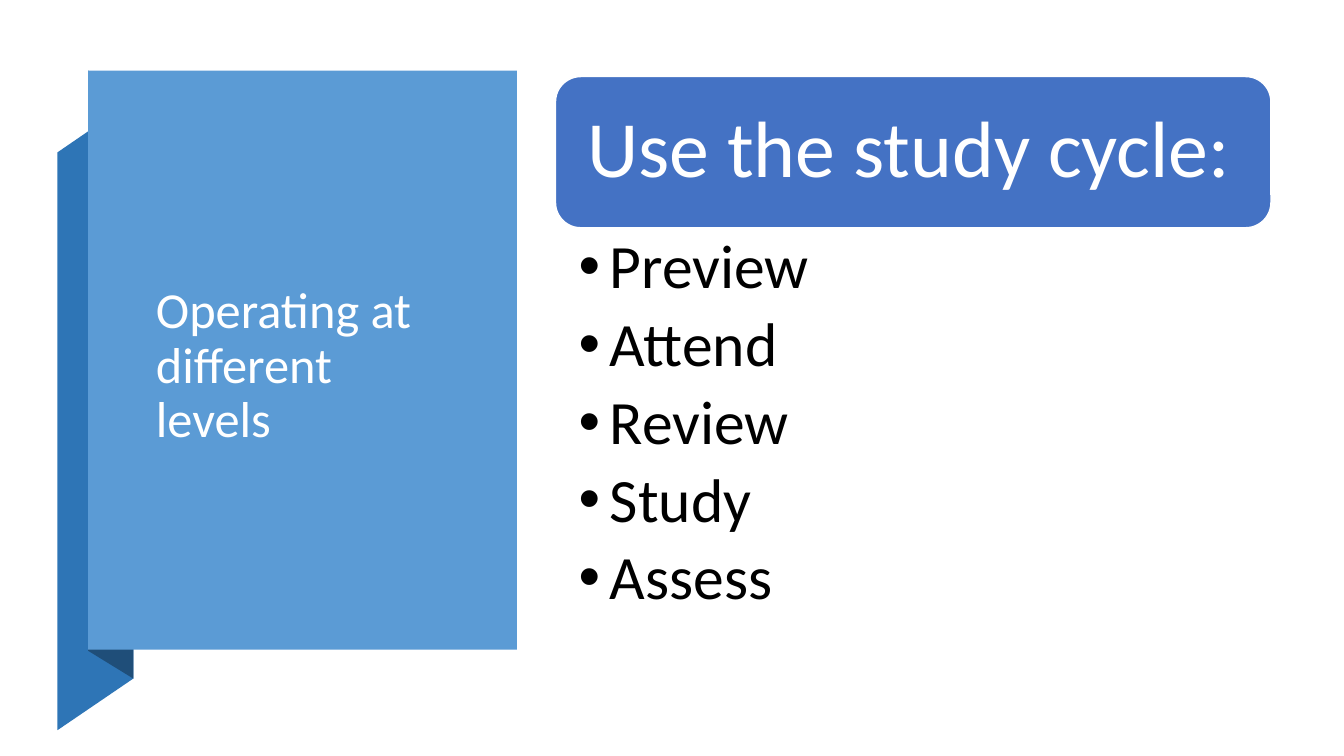
from lxml import etree
from pptx import Presentation
from pptx.dml.color import RGBColor
from pptx.enum.shapes import MSO_SHAPE
from pptx.enum.text import MSO_ANCHOR, MSO_AUTO_SIZE, PP_ALIGN
from pptx.oxml.ns import qn
from pptx.util import Cm, Pt

RECT, ROUND = MSO_SHAPE.RECTANGLE, MSO_SHAPE.ROUNDED_RECTANGLE
TOP, MIDDLE = MSO_ANCHOR.TOP, MSO_ANCHOR.MIDDLE
LEFT, NO_FIT = PP_ALIGN.LEFT, MSO_AUTO_SIZE.NONE


def paint(sp, color):
    sp.shadow.inherit = False
    sp.fill.solid()
    sp.fill.fore_color.rgb = RGBColor.from_string(color)
    sp.line.fill.background()


def style_text(sp, size, color, anchor, insets, after=0):
    tf = sp.text_frame
    tf.word_wrap, tf.auto_size, tf.vertical_anchor = True, NO_FIT, anchor
    tf.margin_left, tf.margin_top, tf.margin_right, tf.margin_bottom = map(Cm, insets)
    for p in tf.paragraphs:
        p.alignment, p.line_spacing = LEFT, 0.9
        p.space_before, p.space_after = Pt(0), Pt(after)
        for r in p.runs:
            r.font.name, r.font.size = "Calibri", Pt(size)
            r.font.color.rgb = RGBColor.from_string(color)


prs = Presentation()
prs.slide_width, prs.slide_height = Cm(33.87), Cm(19.05)
s = prs.slides.add_slide(prs.slide_layouts[1])
title, body = s.shapes.title, s.placeholders[1]

# Folded ribbon behind the title panel
ribbon_parts = [
    ("2E75B6", [(1.45, 18.4), (3.36, 17.1), (3.36, 2.53), (1.45, 3.84)]),
    ("1F4E79", [(2.22, 16.4), (3.36, 17.1), (3.36, 2.53), (2.22, 1.78)]),
]
for color, points in ribbon_parts:
    corners = [(Cm(x), Cm(y)) for x, y in points]
    builder = s.shapes.build_freeform(*corners[0])
    builder.add_line_segments(corners[1:], close=True)
    paint(builder.convert_to_shape(), color)

# Title panel, with the title raised above it
panel = s.shapes.add_shape(RECT, Cm(2.22), Cm(1.78), Cm(10.81), Cm(14.59))
paint(panel, "5B9BD5")
title.left, title.top, title.width, title.height = Cm(3.68), Cm(4.24), Cm(7.65), Cm(10.01)
title.text_frame.text = "Operating at different levels"
style_text(title, 36, "FFFFFF", MIDDLE, (0.25, 0.13, 0.25, 0.13))
panel.element.addnext(title.element)

# Study cycle heading
heading = s.shapes.add_shape(ROUND, Cm(14), Cm(1.93), Cm(18.03), Cm(3.81))
paint(heading, "4472C4")
heading.line.color.rgb = RGBColor.from_string("FFFFFF")
heading.line.width = Pt(1)
heading.text_frame.text = "Use the study cycle:"
style_text(heading, 57, "FFFFFF", MIDDLE, (0.61, 0.61, 0.61, 0.61))

# Study cycle steps
body.left, body.top, body.width, body.height = Cm(14), Cm(5.74), Cm(18.03), Cm(10.49)
body.text_frame.text = "\n".join(["Preview", "Attend", "Review", "Study", "Assess"])
style_text(body, 44, "000000", TOP, (0.58, 0.2, 1.12, 0.2), after=8)
for p in body.text_frame.paragraphs:
    pPr = p._p.get_or_add_pPr()
    pPr.set("marL", str(Cm(0.79)))
    pPr.set("indent", str(-Cm(0.79)))
    etree.SubElement(pPr, qn("a:buChar")).set("char", "•")

prs.save("out.pptx")
